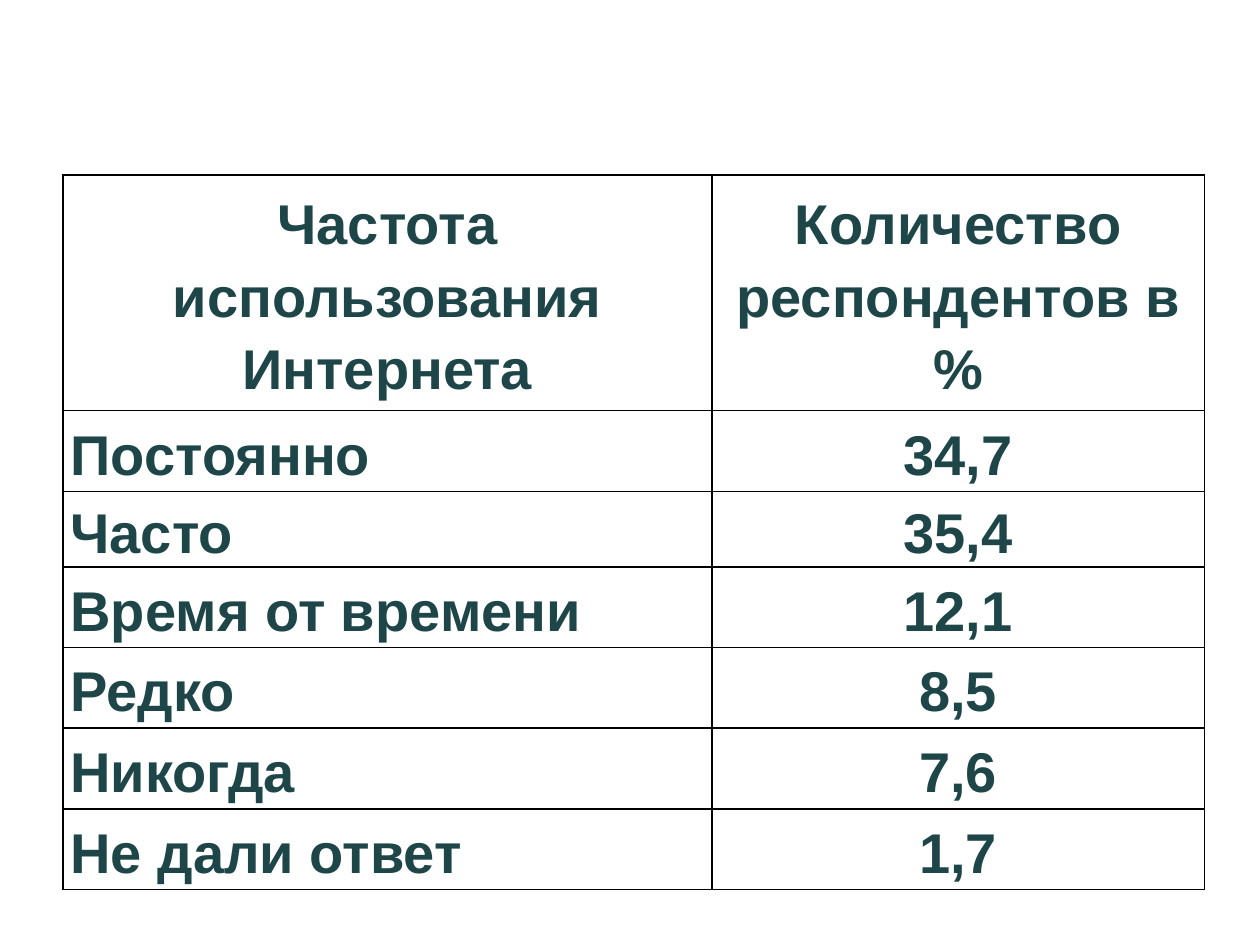
from dataclasses import dataclass

import lxml.etree
import pptx
import pptx.dml.color
import pptx.enum.text
import pptx.oxml.ns
import pptx.util

Inches = pptx.util.Inches
Align = pptx.enum.text.PP_ALIGN


@dataclass(frozen=True)
class Theme:
    font: str = "Arial"
    text_color: str = "1E4649"
    border_color: str = "000000"
    text_size: int = 32
    border_width: int = 1
    line_spacing: float = 1.15


class SlideBuilder:
    def __init__(self, slide, theme):
        self.slide = slide
        self.theme = theme

    def table(self, left, top, column_widths, row_heights, rows):
        frame = self.slide.shapes.add_table(
            len(rows), len(column_widths), Inches(left), Inches(top),
            Inches(sum(column_widths)), Inches(sum(row_heights)))
        table = frame.table
        table.first_row = False
        table.horz_banding = False
        for column, width in zip(table.columns, column_widths):
            column.width = Inches(width)
        for row_index, (row, height) in enumerate(zip(table.rows, row_heights)):
            row.height = Inches(height)
            for column_index, text in enumerate(rows[row_index]):
                is_label = row_index > 0 and column_index == 0
                alignment = Align.LEFT if is_label else Align.CENTER
                self.cell(row.cells[column_index], text, alignment)

    def cell(self, cell, text, alignment):
        cell.fill.background()
        cell.margin_left = cell.margin_right = Inches(0.06)
        cell.margin_top = cell.margin_bottom = 0
        cell.vertical_anchor = pptx.enum.text.MSO_ANCHOR.MIDDLE
        cell.text = text
        paragraph = cell.text_frame.paragraphs[0]
        paragraph.alignment = alignment
        paragraph.line_spacing = self.theme.line_spacing
        font = paragraph.font
        font.name = self.theme.font
        font.size = pptx.util.Pt(self.theme.text_size)
        font.bold = True
        font.color.rgb = pptx.dml.color.RGBColor.from_string(self.theme.text_color)
        self.borders(cell)

    def borders(self, cell):
        qn = pptx.oxml.ns.qn
        properties = cell._tc.get_or_add_tcPr()
        for index, side in enumerate(("lnL", "lnR", "lnT", "lnB")):
            line = lxml.etree.Element(
                qn(f"a:{side}"), w=str(pptx.util.Pt(self.theme.border_width)))
            fill = lxml.etree.SubElement(line, qn("a:solidFill"))
            lxml.etree.SubElement(fill, qn("a:srgbClr"), val=self.theme.border_color)
            properties.insert(index, line)


def main():
    presentation = pptx.Presentation()
    presentation.slide_width = Inches(10)
    presentation.slide_height = Inches(7.5)
    slide = presentation.slides.add_slide(presentation.slide_layouts[6])
    builder = SlideBuilder(slide, Theme())
    frequency_rows = [
        ("Частота использования Интернета", "Количество респондентов в %"),
        ("Постоянно", "34,7"),
        ("Часто", "35,4"),
        ("Время от времени", "12,1"),
        ("Редко", "8,5"),
        ("Никогда", "7,6"),
        ("Не дали ответ", "1,7"),
    ]
    row_heights = [1.87, 0.64, 0.6] + [0.64] * 4
    builder.table(0.5, 1.39, [5.15, 3.91], row_heights, frequency_rows)
    presentation.save("out.pptx")


if __name__ == "__main__":
    main()
